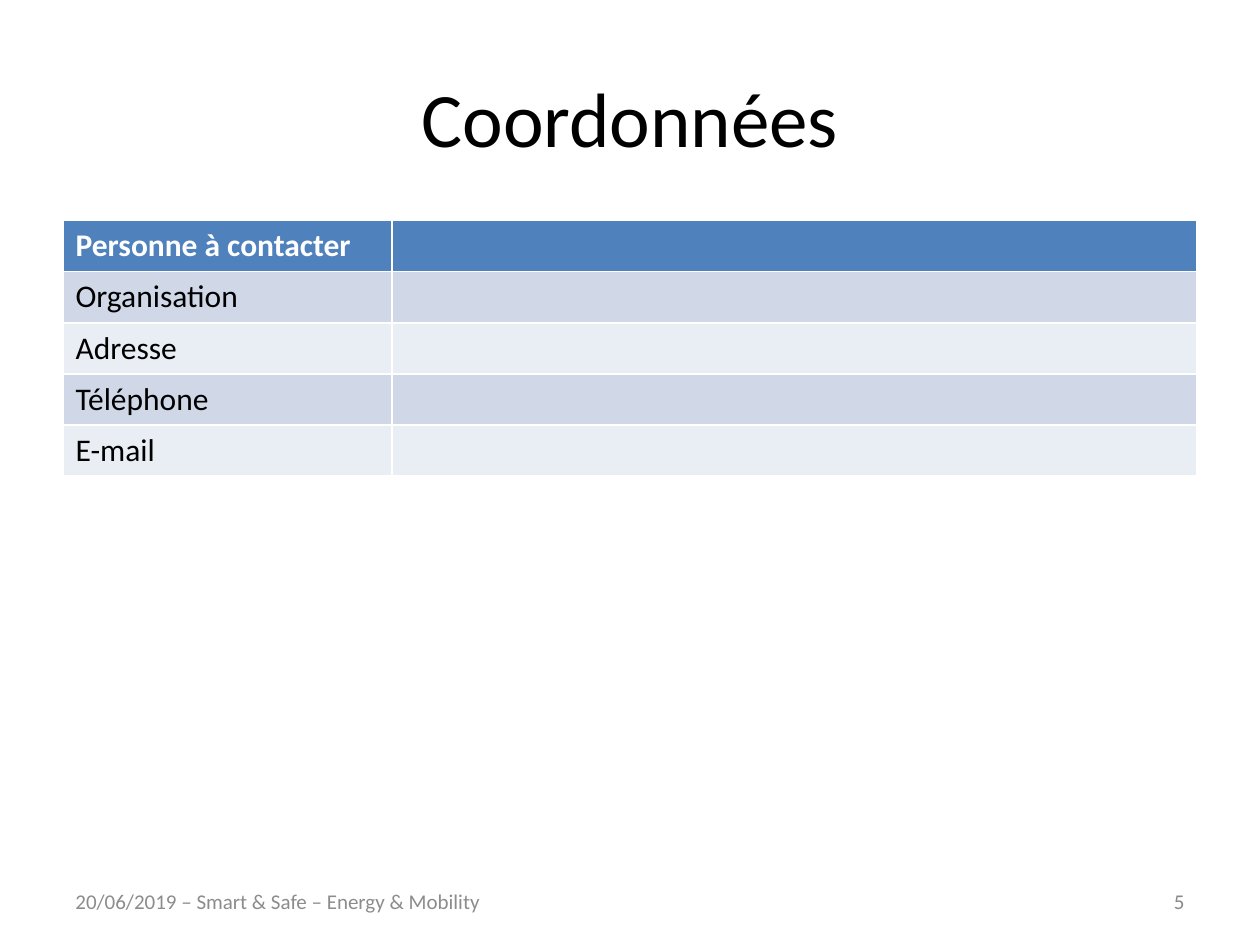
import pptx
import pptx.dml.color
import pptx.enum.text
import pptx.util

RGBColor = pptx.dml.color.RGBColor
Align = pptx.enum.text.PP_ALIGN
Anchor = pptx.enum.text.MSO_ANCHOR

BLACK = RGBColor(0x00, 0x00, 0x00)
WHITE = RGBColor(0xFF, 0xFF, 0xFF)
BLUE = RGBColor(0x4F, 0x81, 0xBD)
BANDS = RGBColor(0xE9, 0xED, 0xF4), RGBColor(0xD0, 0xD8, 0xE8)
GREY = RGBColor(0x89, 0x89, 0x89)
SLATE = RGBColor(0x8C, 0x8C, 0x8C)


class Deck:
    """Hold the font, a grid of 20 columns by 150 rows and the current slide."""

    def __init__(self, font="Calibri", cols=20, rows=150):
        self.font = font
        self.deck = pptx.Presentation()
        self.deck.slide_width = pptx.util.Inches(10)
        self.deck.slide_height = pptx.util.Inches(7.5)
        self.col = self.deck.slide_width / cols
        self.row = self.deck.slide_height / rows
        self.slide = self.deck.slides.add_slide(self.deck.slide_layouts[5])

    def box(self, left, top, width, height):
        return (round(left * self.col), round(top * self.row),
                round(width * self.col), round(height * self.row))

    def style(self, frame, text, size, color, bold=False, align=Align.LEFT):
        frame.text = text
        frame.word_wrap = True
        for para in frame.paragraphs:
            para.alignment = align
            para.font.size = pptx.util.Pt(size)
            for run in para.runs:
                run.font.name = self.font
                run.font.size = pptx.util.Pt(size)
                run.font.bold = bold
                run.font.color.rgb = color

    def title(self, text, *area):
        shape = self.slide.shapes.title
        shape.left, shape.top, shape.width, shape.height = self.box(*area)
        shape.text_frame.vertical_anchor = Anchor.MIDDLE
        self.style(shape.text_frame, text, 44, BLACK, align=Align.CENTER)

    def label(self, text, color, align, *area):
        frame = self.slide.shapes.add_textbox(*self.box(*area)).text_frame
        frame.vertical_anchor = Anchor.MIDDLE
        self.style(frame, text, 12, color, align=align)

    def table(self, names, split, *area):
        frame = self.slide.shapes.add_table(len(names), 2, *self.box(*area))
        table = frame.table
        for column, share in zip(table.columns, (split, 1 - split)):
            column.width = round(area[2] * self.col * share)
        for index, (name, row) in enumerate(zip(names, table.rows)):
            head = index == 0
            for cell, text in zip(row.cells, (name, "")):
                cell.fill.solid()
                cell.fill.fore_color.rgb = BLUE if head else BANDS[index % 2]
                self.style(cell.text_frame, text, 18,
                           WHITE if head else BLACK, bold=head)


def main():
    deck = Deck()
    deck.title("Coordonnées", 1, 6, 18, 25)
    names = ["Personne à contacter", "Organisation", "Adresse",
             "Téléphone", "E-mail"]
    deck.table(names, 0.29, 1, 35, 18, 40.6)
    deck.label("5", GREY, Align.RIGHT, 14.34, 139, 4.66, 8)
    deck.label("20/06/2019 – Smart & Safe – Energy & Mobility",
               SLATE, Align.LEFT, 1, 139, 7.42, 8)
    deck.deck.save("out.pptx")


if __name__ == "__main__":
    main()
